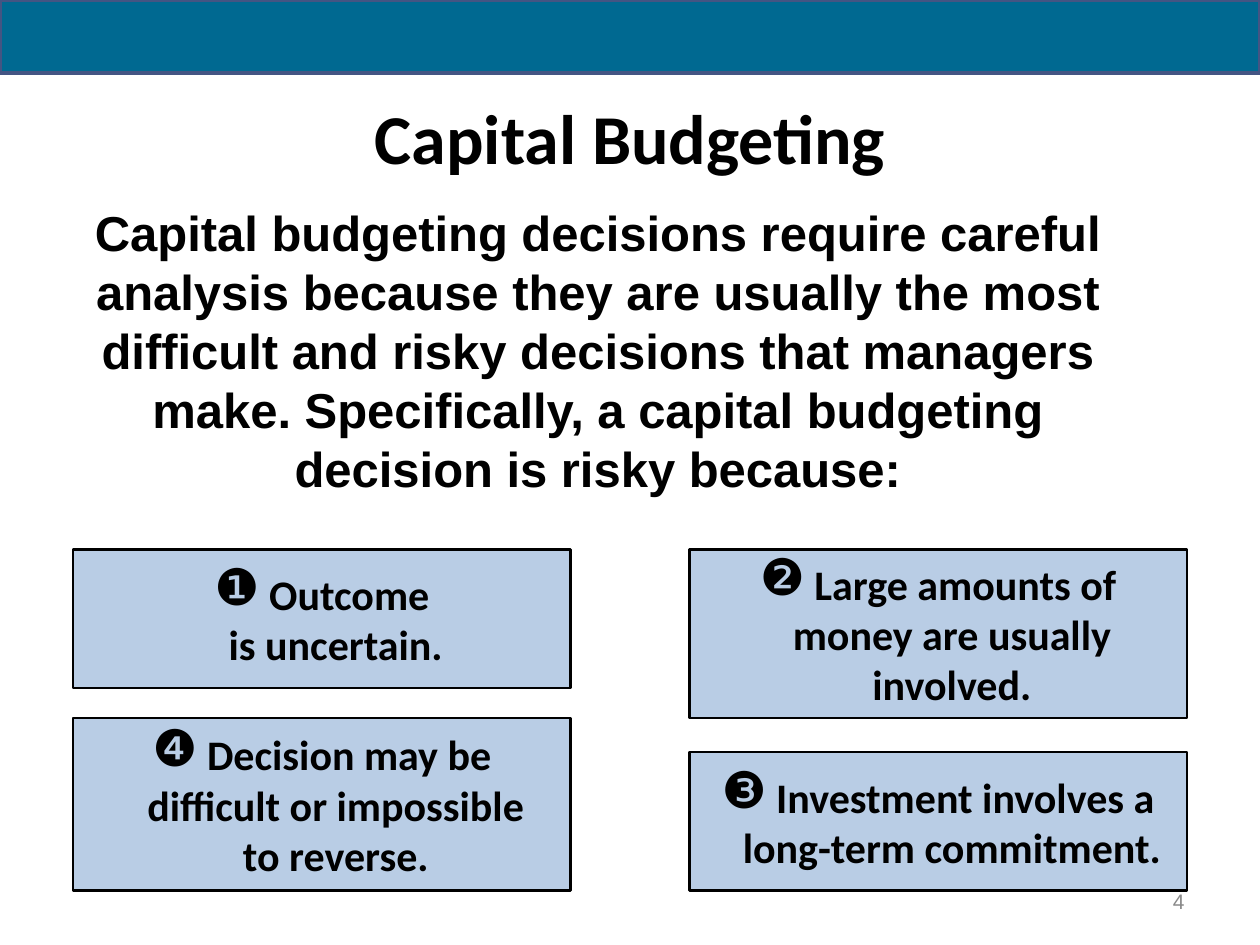
from dataclasses import dataclass

from lxml import etree
from pptx import Presentation
from pptx.dml.color import RGBColor
from pptx.enum.shapes import MSO_SHAPE
from pptx.enum.text import MSO_ANCHOR, PP_ALIGN
from pptx.oxml.ns import qn
from pptx.util import Inches, Pt

RECTANGLE = MSO_SHAPE.RECTANGLE
TOP, MIDDLE = MSO_ANCHOR.TOP, MSO_ANCHOR.MIDDLE
CENTER, RIGHT = PP_ALIGN.CENTER, PP_ALIGN.RIGHT


@dataclass(frozen=True)
class Theme:
    band: str = "006991"
    band_line: str = "445583"
    card: str = "B9CDE5"
    ink: str = "000000"
    muted: str = "898989"
    heading_font: str = "Calibri"
    body_font: str = "Arial"
    title_size: int = 40
    intro_size: int = 28
    card_size: int = 24
    number_size: int = 12


THEME = Theme()
BULLET_INDENT = Inches(0.22)
BULLET_PERCENT = 120

INTRO = (
    "Capital budgeting decisions require careful analysis because they are "
    "usually the most difficult and risky decisions that managers make. "
    "Specifically, a capital budgeting decision is risky because:"
)

# Risk cards: left, top, height, bullet, lines
LEFT_COLUMN, RIGHT_COLUMN, CARD_WIDTH = 0.58, 5.47, 3.95
RISKS = [
    (LEFT_COLUMN, 4.36, 1.1, "❶", ["Outcome", "is uncertain."]),
    (RIGHT_COLUMN, 4.36, 1.34, "❷",
     ["Large amounts of", "money are usually", "involved."]),
    (RIGHT_COLUMN, 5.97, 1.1, "❸",
     ["Investment involves a", "long-term commitment."]),
    (LEFT_COLUMN, 5.7, 1.37, "❹",
     ["Decision may be", "difficult or impossible", "to reverse."]),
]


def write(frame, text, font, size, color=THEME.ink, bold=True,
          align=CENTER, anchor=MIDDLE, wrap=True):
    frame.word_wrap = wrap
    frame.vertical_anchor = anchor
    para = frame.paragraphs[0]
    para.text = text
    para.alignment = align
    para.font.name = font
    para.font.size = Pt(size)
    para.font.bold = bold
    para.font.color.rgb = RGBColor.from_string(color)
    return para


def add_rectangle(page, box, fill, line, line_width):
    shape = page.shapes.add_shape(RECTANGLE, *map(Inches, box))
    shape.shadow.inherit = False
    shape.fill.solid()
    shape.fill.fore_color.rgb = RGBColor.from_string(fill)
    shape.line.color.rgb = RGBColor.from_string(line)
    shape.line.width = Pt(line_width)
    return shape


def add_text(page, box, text, font, size, **style):
    textbox = page.shapes.add_textbox(*map(Inches, box))
    write(textbox.text_frame, text, font, size, **style)


def set_bullet(para, symbol):
    properties = para._p.get_or_add_pPr()
    properties.set("marL", str(BULLET_INDENT))
    properties.set("indent", str(-BULLET_INDENT))
    size = etree.SubElement(properties, qn("a:buSzPct"))
    size.set("val", str(BULLET_PERCENT * 1000))
    etree.SubElement(properties, qn("a:buChar")).set("char", symbol)


def add_risk_card(page, box, symbol, lines):
    card = add_rectangle(page, box, THEME.card, THEME.ink, 1.5)
    # A vertical tab becomes a line break within the paragraph
    para = write(card.text_frame, " " + "\v".join(lines),
                 THEME.heading_font, THEME.card_size, wrap=False)
    set_bullet(para, symbol)


def main():
    deck = Presentation()
    deck.slide_width, deck.slide_height = Inches(10), Inches(7.5)
    page = deck.slides.add_slide(deck.slide_layouts[6])

    # Top band
    add_rectangle(page, (0, 0, 10, 0.58), THEME.band, THEME.band_line, 2.25)

    # Risk cards
    for left, top, height, symbol, lines in RISKS:
        add_risk_card(page, (left, top, CARD_WIDTH, height), symbol, lines)

    # Title, page number and introduction
    add_text(page, (0.5, 0.58, 9, 1), "Capital Budgeting",
             THEME.heading_font, THEME.title_size)
    add_text(page, (7.17, 6.95, 2.33, 0.4), "4", THEME.body_font,
             THEME.number_size, color=THEME.muted, bold=False, align=RIGHT)
    add_text(page, (0.33, 1.56, 8.83, 2.46), INTRO,
             THEME.body_font, THEME.intro_size, anchor=TOP)

    deck.save("out.pptx")


if __name__ == "__main__":
    main()
